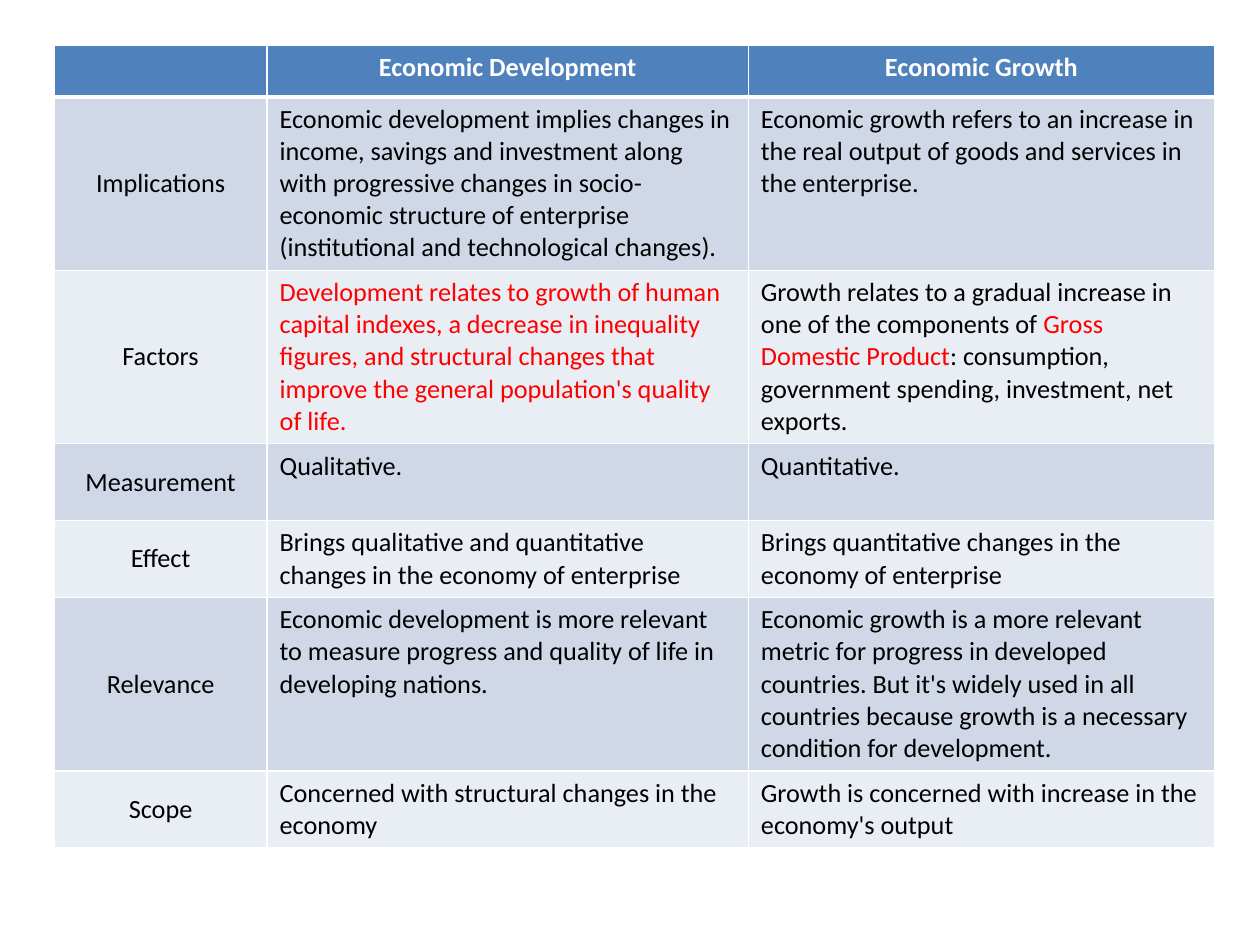
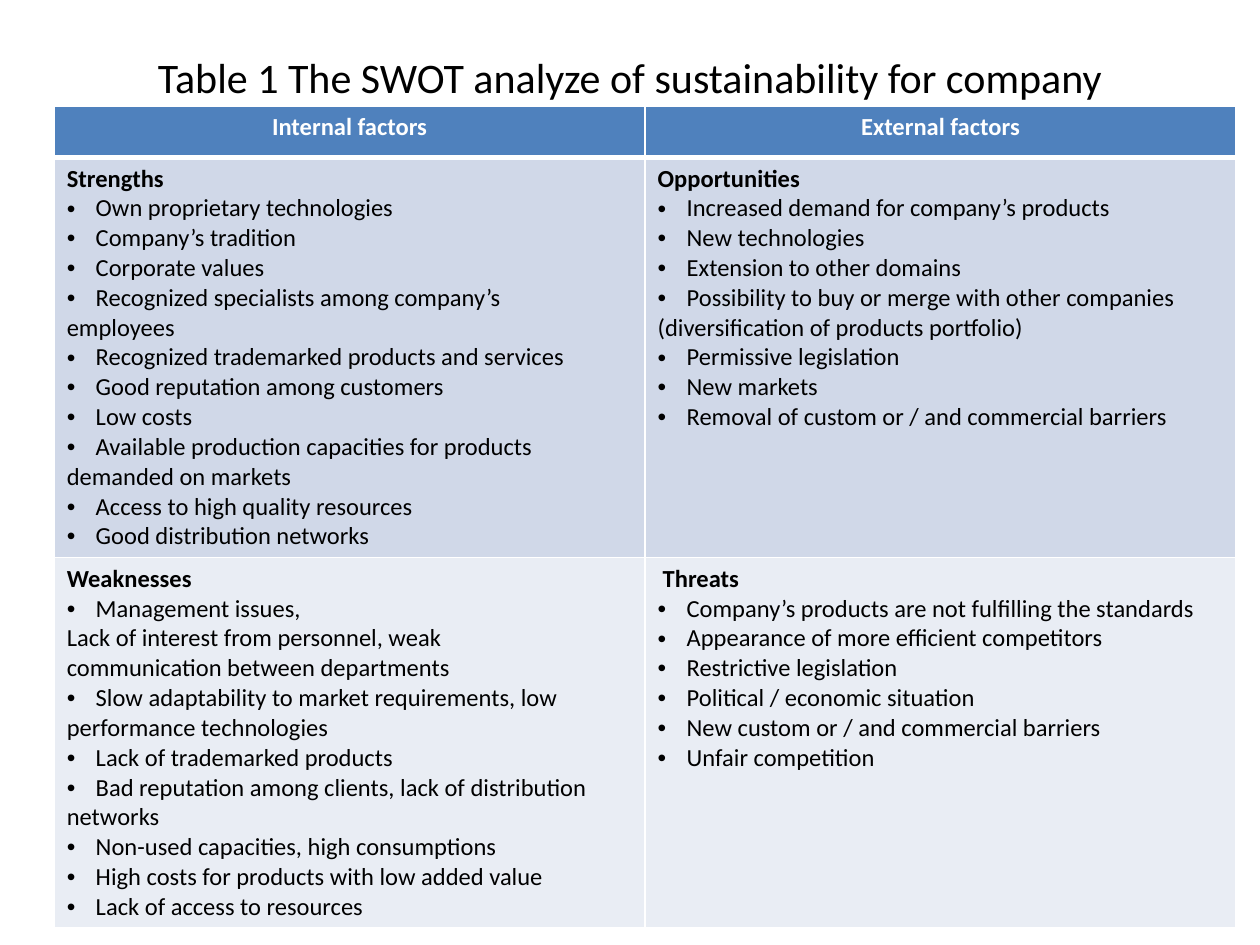
from lxml import etree
from pptx import Presentation
from pptx.dml.color import RGBColor
from pptx.enum import text
from pptx.oxml import ns
from pptx.util import Inches, Pt

FONT = "Calibri"
WHITE, BLACK, RED = "FFFFFF", "000000", "FF0000"
HEADER_FILL = "4F81BD"
BAND_FILLS = ("D0D8E8", "E9EDF4")
CENTER = text.PP_ALIGN.CENTER
MIDDLE = text.MSO_ANCHOR.MIDDLE
BULLET = "• "

COMPARISON = [
    ("", "Economic Development", "Economic Growth"),
    ("Implications",
     "Economic development implies changes in income, savings and investment along with "
     "progressive changes in socio-economic structure of enterprise (institutional and "
     "technological changes).",
     "Economic growth refers to an increase in the real output of goods and services in "
     "the enterprise."),
    ("Factors",
     "|Development relates to growth of human capital indexes, a decrease in inequality "
     "figures, and structural changes that improve the general population's quality of life.|",
     "Growth relates to a gradual increase in one of the components of |Gross Domestic "
     "Product|: consumption, government spending, investment, net exports."),
    ("Measurement", "Qualitative.", "Quantitative."),
    ("Effect",
     "Brings qualitative and quantitative changes in the economy of enterprise",
     "Brings quantitative changes in the economy of enterprise"),
    ("Relevance",
     "Economic development is more relevant to measure progress and quality of life in "
     "developing nations.",
     "Economic growth is a more relevant metric for progress in developed countries. But "
     "it's widely used in all countries because growth is a necessary condition for "
     "development."),
    ("Scope",
     "Concerned with structural changes in the economy",
     "Growth is concerned with increase in the economy's output"),
]

STRENGTHS = """Strengths
• Own proprietary technologies
• Company’s tradition
• Corporate values
• Recognized specialists among company’s
employees
• Recognized trademarked products and services
• Good reputation among customers
• Low costs
• Available production capacities for products
demanded on markets
• Access to high quality resources
• Good distribution networks"""

OPPORTUNITIES = """Opportunities
• Increased demand for company’s products
• New technologies
• Extension to other domains
• Possibility to buy or merge with other companies
(diversification of products portfolio)
• Permissive legislation
• New markets
• Removal of custom or / and commercial barriers"""

WEAKNESSES = """Weaknesses
• Management issues,
Lack of interest from personnel, weak
communication between departments
• Slow adaptability to market requirements, low
performance technologies
• Lack of trademarked products
• Bad reputation among clients, lack of distribution
networks
• Non-used capacities, high consumptions
• High costs for products with low added value
• Lack of access to resources"""

THREATS = """Threats
• Company’s products are not fulfilling the standards
• Appearance of more efficient competitors
• Restrictive legislation
• Political / economic situation
• New custom or / and commercial barriers
• Unfair competition"""

SWOT = [
    ("Internal factors", "External factors"),
    (STRENGTHS, OPPORTUNITIES),
    (WEAKNESSES, THREATS),
]


def rgb(hex_color):
    return RGBColor.from_string(hex_color)


def style_run(run, size, color=BLACK, bold=False):
    font = run.font
    font.name, font.size, font.bold = FONT, Pt(size), bold
    font.color.rgb = rgb(color)


def add_border(cell, side, width):
    line = etree.SubElement(cell._tc.get_or_add_tcPr(), ns.qn(f"a:ln{side}"), w=str(Pt(width)))
    fill = etree.SubElement(line, ns.qn("a:solidFill"))
    etree.SubElement(fill, ns.qn("a:srgbClr"), val=WHITE)


def add_bullet(paragraph, indent):
    properties = paragraph._p.get_or_add_pPr()
    properties.set("marL", str(indent))
    properties.set("indent", str(-indent))
    etree.SubElement(properties, ns.qn("a:buFont"), typeface="Arial")
    etree.SubElement(properties, ns.qn("a:buChar"), char=BULLET.strip())


def write_marked(paragraph, content, size):
    """Write content in black, with the parts between bars in red."""
    for index, part in enumerate(content.split("|")):
        if part:
            run = paragraph.add_run()
            run.text = part
            style_run(run, size, RED if index % 2 else BLACK)


def write_header(cell, content, size):
    paragraph = cell.text_frame.paragraphs[0]
    paragraph.text = content
    paragraph.alignment = CENTER
    for run in paragraph.runs:
        style_run(run, size, WHITE, bold=True)


def write_comparison(cell, content, size, column):
    paragraph = cell.text_frame.paragraphs[0]
    write_marked(paragraph, content, size)
    if column == 0:
        paragraph.alignment = CENTER
        cell.vertical_anchor = MIDDLE


def write_factors(cell, content, size, column):
    """Write a bold heading, then its bulleted lines and their flush continuations."""
    frame = cell.text_frame
    frame.text = content.replace(BULLET, "")
    for index, (line, paragraph) in enumerate(zip(content.split("\n"), frame.paragraphs)):
        if line.startswith(BULLET):
            add_bullet(paragraph, Inches(0.23))
        style_run(paragraph.runs[0], size, bold=index == 0)


def add_banded_table(slide, left, top, widths, heights, rows, size, write_body):
    table = slide.shapes.add_table(
        len(rows), len(widths), Inches(left), Inches(top),
        Inches(sum(widths)), Inches(sum(heights))).table
    for column, width in zip(table.columns, widths):
        column.width = Inches(width)
    for row_index, (row, height, contents) in enumerate(zip(table.rows, heights, rows)):
        row.height = Inches(height)
        for column_index, (cell, content) in enumerate(zip(row.cells, contents)):
            for side in "LRTB":
                heavy = (row_index, side) in ((0, "B"), (1, "T"))
                add_border(cell, side, 3 if heavy else 1)
            cell.fill.solid()
            if row_index == 0:
                cell.fill.fore_color.rgb = rgb(HEADER_FILL)
                write_header(cell, content, size)
            else:
                cell.fill.fore_color.rgb = rgb(BAND_FILLS[(row_index - 1) % 2])
                write_body(cell, content, size, column_index)
    return table


def add_comparison_slide(deck):
    slide = deck.slides.add_slide(deck.slide_layouts.get_by_name("Blank"))
    short, tall = 0.61, 1.37
    add_banded_table(slide, 0.43, 0.36, (1.69, 3.82, 3.7),
                     (0.41, tall, tall, short, short, tall, short),
                     COMPARISON, 15, write_comparison)


def add_swot_slide(deck):
    slide = deck.slides.add_slide(deck.slide_layouts.get_by_name("Title Only"))
    title = slide.shapes.title
    title.left, title.top, title.width, title.height = map(Inches, (0.5, 0.3, 9, 0.61))
    title.text_frame.text = "Table 1 The SWOT analyze of sustainability for company"
    title.text_frame.vertical_anchor = MIDDLE
    title.text_frame.paragraphs[0].alignment = CENTER
    style_run(title.text_frame.paragraphs[0].runs[0], 24)
    table = add_banded_table(slide, 0.43, 0.84, (4.69, 4.69), (0.41, 3.17, 2.94),
                             SWOT, 14, write_factors)
    threats_heading = table.cell(2, 1).text_frame.paragraphs[0]
    threats_heading._p.get_or_add_pPr().set("marL", str(Inches(0.04)))


def main():
    deck = Presentation()
    deck.slide_width, deck.slide_height = Inches(10), Inches(7.5)
    add_comparison_slide(deck)
    add_swot_slide(deck)
    deck.save("out.pptx")


if __name__ == "__main__":
    main()
